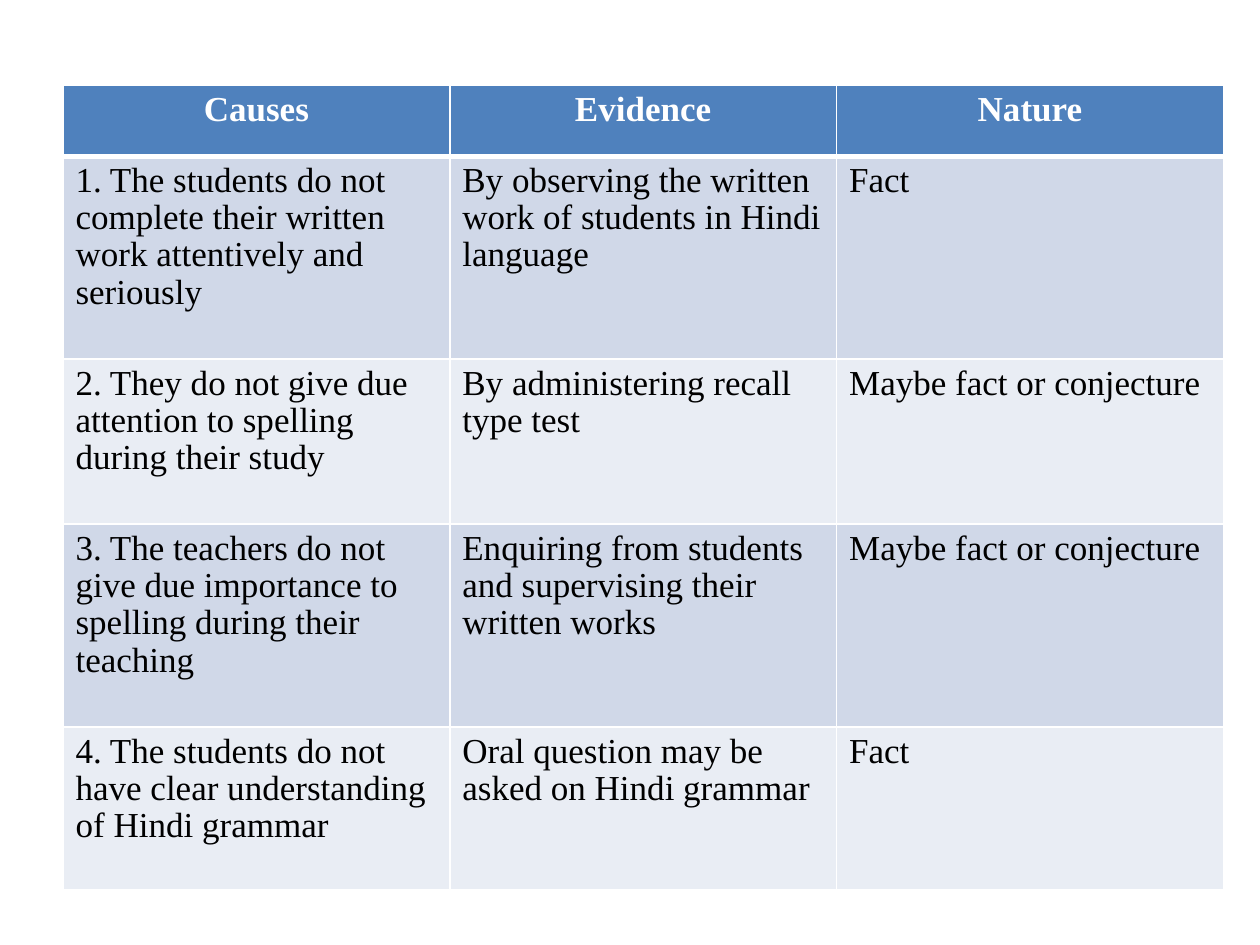
from dataclasses import dataclass

from lxml.etree import SubElement
from pptx import Presentation
from pptx.dml.color import RGBColor
from pptx.enum.text import PP_ALIGN
from pptx.oxml.ns import qn
from pptx.util import Inches, Pt


@dataclass(frozen=True)
class Theme:
    font: str = "Times New Roman"
    size: int = 20
    line_spacing: float = 0.96
    header_fill: str = "4F81BD"
    header_text: str = "FFFFFF"
    body_text: str = "000000"
    bands: tuple = ("D0D8E8", "E9EDF4")
    border: str = "FFFFFF"
    thin: int = 1
    thick: int = 3


THEME = Theme()
ROW_HEIGHTS = (0.56, 1.61, 1.31, 1.61, 1.29)
COLUMN_WIDTH = 3.07
ROWS = (
    ("Causes", "Evidence", "Nature"),
    (
        "1. The students do not complete their written work attentively and seriously",
        "By observing the written work of students in Hindi language",
        "Fact",
    ),
    (
        "2. They do not give due attention to spelling during their study",
        "By administering recall type test",
        "Maybe fact or conjecture",
    ),
    (
        "3. The teachers do not give due importance to spelling during their teaching",
        "Enquiring from students and supervising their written works",
        "Maybe fact or conjecture",
    ),
    (
        "4. The students do not have clear understanding of Hindi grammar",
        "Oral question may be asked on Hindi grammar",
        "Fact",
    ),
)


def set_borders(cell, top, bottom):
    """Draw solid cell borders; the sides are always thin."""
    properties = cell._tc.get_or_add_tcPr()
    widths = {"L": THEME.thin, "R": THEME.thin, "T": top, "B": bottom}
    for side, width in widths.items():
        line = SubElement(properties, qn(f"a:ln{side}"), w=str(Pt(width)))
        fill = SubElement(line, qn("a:solidFill"))
        SubElement(fill, qn("a:srgbClr"), val=THEME.border)


def fill_cell(cell, text, row):
    is_header = row == 0
    set_borders(
        cell,
        top=THEME.thick if row == 1 else THEME.thin,
        bottom=THEME.thick if is_header else THEME.thin,
    )
    fill_color = THEME.header_fill if is_header else THEME.bands[(row - 1) % 2]
    cell.fill.solid()
    cell.fill.fore_color.rgb = RGBColor.from_string(fill_color)

    cell.text = text
    paragraph = cell.text_frame.paragraphs[0]
    paragraph.alignment = PP_ALIGN.CENTER if is_header else PP_ALIGN.LEFT
    paragraph.line_spacing = THEME.line_spacing
    font = paragraph.font
    font.name = THEME.font
    font.size = Pt(THEME.size)
    font.bold = is_header
    text_color = THEME.header_text if is_header else THEME.body_text
    font.color.rgb = RGBColor.from_string(text_color)


def add_causes_table(slide):
    columns = len(ROWS[0])
    table = slide.shapes.add_table(
        len(ROWS), columns, Inches(0.5), Inches(0.68),
        Inches(COLUMN_WIDTH * columns), Inches(sum(ROW_HEIGHTS)),
    ).table
    for column in table.columns:
        column.width = Inches(COLUMN_WIDTH)
    for row, (height, texts) in enumerate(zip(ROW_HEIGHTS, ROWS)):
        table.rows[row].height = Inches(height)
        for column, text in enumerate(texts):
            fill_cell(table.cell(row, column), text, row)


def main():
    presentation = Presentation()
    presentation.slide_width = Inches(10)
    presentation.slide_height = Inches(7.5)
    blank_layout = presentation.slide_layouts[6]
    slide = presentation.slides.add_slide(blank_layout)
    add_causes_table(slide)
    presentation.save("out.pptx")


if __name__ == "__main__":
    main()
